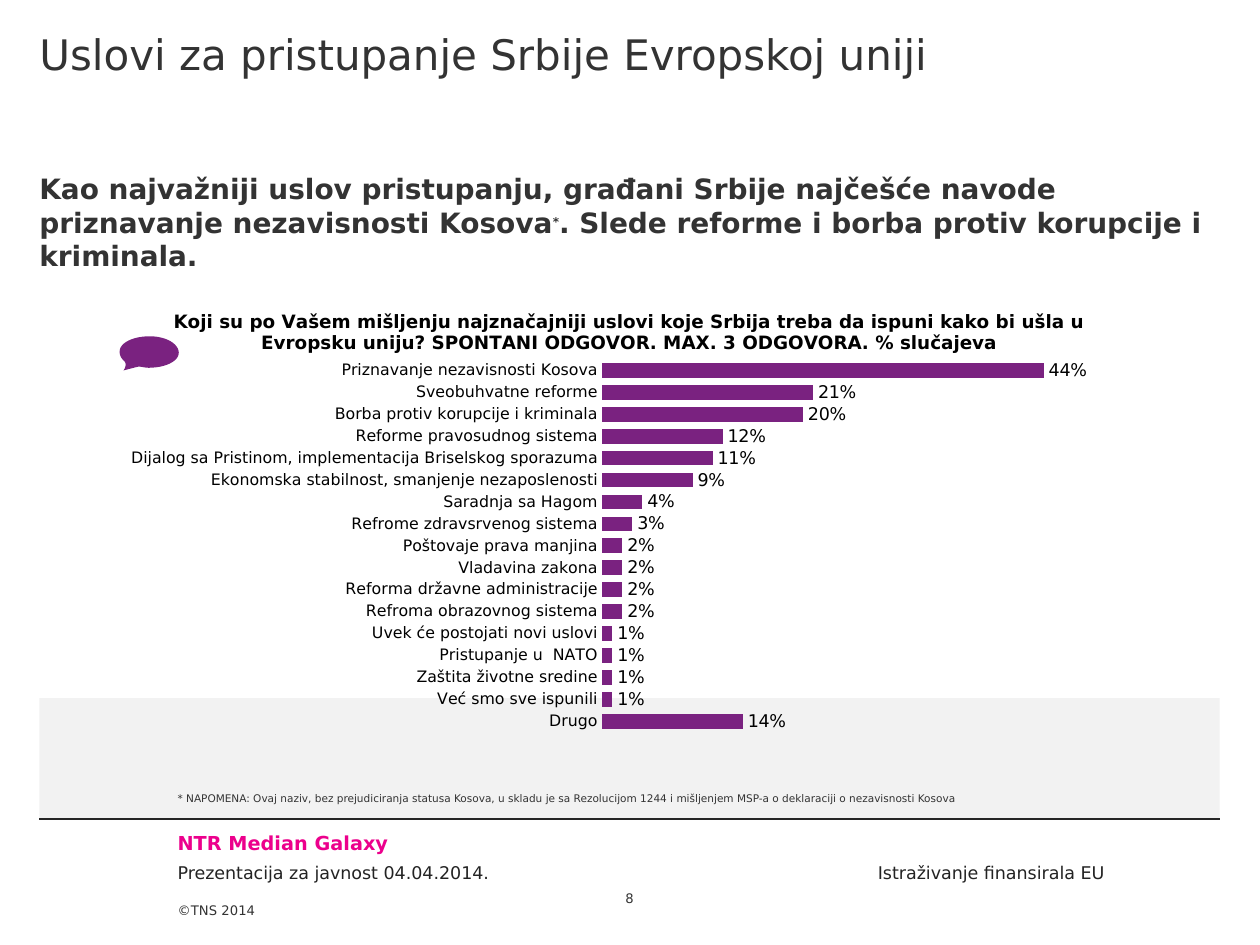
import pptx
import pptx.chart.data
import pptx.dml.color
import pptx.enum.chart
import pptx.enum.shapes
import pptx.enum.text
import pptx.oxml
import pptx.util

Pt = pptx.util.Pt
RGB = pptx.dml.color.RGBColor
Align = pptx.enum.text.PP_ALIGN
Anchor = pptx.enum.text.MSO_ANCHOR

FACE = "DejaVu Sans"
PURPLE = RGB(0x7A, 0x22, 0x80)
PINK = RGB(0xEC, 0x00, 0x8C)
DARK = RGB(0x33, 0x33, 0x33)
INK = RGB(0x23, 0x23, 0x23)
RULE = RGB(0x26, 0x26, 0x26)
PALE = RGB(0xF2, 0xF2, 0xF2)
BLACK = RGB(0, 0, 0)

LEFT, WIDE, INDENT = 22.5, 674.5, 101.5

TITLE = ("Koji su po Vašem mišljenju najznačajniji uslovi koje Srbija treba da "
         "ispuni kako bi ušla u Evropsku uniju? SPONTANI ODGOVOR. "
         "MAX. 3 ODGOVORA. % slučajeva")
ANSWERS = {
    "Priznavanje nezavisnosti Kosova": 44,
    "Sveobuhvatne reforme": 21,
    "Borba protiv korupcije i kriminala": 20,
    "Reforme pravosudnog sistema": 12,
    "Dijalog sa Pristinom, implementacija Briselskog sporazuma": 11,
    "Ekonomska stabilnost, smanjenje nezaposlenosti": 9,
    "Saradnja sa Hagom": 4,
    "Refrome zdravsrvenog sistema": 3,
    "Poštovaje prava manjina": 2,
    "Vladavina zakona": 2,
    "Reforma državne administracije": 2,
    "Refroma obrazovnog sistema": 2,
    "Uvek će postojati novi uslovi": 1,
    "Pristupanje u  NATO": 1,
    "Zaštita životne sredine": 1,
    "Već smo sve ispunili": 1,
    "Drugo": 14,
}

# Bubble outline: two control points and an end point per curve
START = (85.7, 192.2)
CURVES = [
    [(76.3, 192.2), (68.4, 195.8), (68.4, 200.9)],
    [(68.4, 203), (69.1, 204.5), (70.6, 205.9)],
    [(73.4, 208.2), (70.6, 211.7), (70.6, 211.7)],
    [(79.2, 209.5), (79.2, 209.5), (79.2, 209.5)],
    [(80.6, 209.5), (82.8, 210.2), (85, 210.2)],
    [(94.3, 210.2), (102.2, 206.6), (102.2, 201.6)],
    [(95, 192.2), (95, 192.2), START],
]
CURVES[-1][0] = (102.2, 196.6)


def apply(item, vals):
    for name, val in vals.items():
        setattr(item, name, val)


def style(font, size, color, bold=False):
    apply(font, {"name": FACE, "size": Pt(size), "bold": bold})
    font.color.rgb = color


def paint(shape, color):
    shape.shadow.inherit = False
    shape.fill.solid()
    shape.fill.fore_color.rgb = color
    shape.line.fill.background()


def add_text(slide, box, text, size, color=DARK, bold=False,
             align=Align.LEFT, anchor=Anchor.TOP, top=0, base=0):
    """Add a text box; top and base are its inner margins."""
    frame = slide.shapes.add_textbox(*map(Pt, box)).text_frame
    apply(frame, {"word_wrap": True, "vertical_anchor": anchor,
                  "margin_left": 0, "margin_right": 0,
                  "margin_top": Pt(top), "margin_bottom": Pt(base)})
    para = frame.paragraphs[0]
    para.alignment = align
    add_run(para, text, size, color, bold)
    return para


def add_run(para, text, size, color, bold):
    run = para.add_run()
    run.text = text
    style(run.font, size, color, bold)
    return run


def add_band(slide):
    band = slide.shapes.add_shape(pptx.enum.shapes.MSO_SHAPE.RECTANGLE,
                                  Pt(LEFT), Pt(399), Pt(WIDE), Pt(69))
    paint(band, PALE)
    line = slide.shapes.add_connector(
        pptx.enum.shapes.MSO_CONNECTOR.STRAIGHT,
        Pt(LEFT), Pt(468), Pt(LEFT + WIDE), Pt(468))
    line.line.color.rgb = RULE
    line.line.width = Pt(0.75)
    props = line._element.spPr
    props.append(props.makeelement(pptx.oxml.ns.qn("a:effectLst"), {}))


def set_plot(chart, spot):
    """Fix the inner plot area as fractions of the chart."""
    area = chart._chartSpace.chart.plotArea
    for old in area.findall(pptx.oxml.ns.qn("c:layout")):
        area.remove(old)
    rows = [("layoutTarget", "inner"), ("xMode", "edge"), ("yMode", "edge"),
            *zip("xywh", spot)]
    body = "".join(f'<c:{tag} val="{val}"/>' for tag, val in rows)
    area.insert(0, pptx.oxml.parse_xml(
        f'<c:layout {pptx.oxml.ns.nsdecls("c")}>'
        f'<c:manualLayout>{body}</c:manualLayout></c:layout>'))


def add_bars(slide):
    kinds = pptx.enum.chart
    data = pptx.chart.data.CategoryChartData(number_format="0\\%")
    data.categories = list(ANSWERS)
    data.add_series("Series 1", list(ANSWERS.values()))
    chart = slide.shapes.add_chart(
        kinds.XL_CHART_TYPE.BAR_CLUSTERED,
        Pt(LEFT), Pt(165.5), Pt(WIDE), Pt(263), data).chart
    style(chart.font, 18, BLACK)
    chart.has_legend = False
    frame = chart.chart_title.text_frame
    add_run(frame.paragraphs[0], TITLE, 10.5, BLACK, True)
    set_plot(chart, (0.477, 0.152, 0.425, 0.81))

    axis = chart.category_axis
    apply(axis, {"reverse_order": True, "has_major_gridlines": False,
                 "major_tick_mark": kinds.XL_TICK_MARK.NONE})
    axis.format.line.fill.background()
    style(axis.tick_labels.font, 9, BLACK)
    apply(chart.value_axis, {"visible": False, "has_major_gridlines": False,
                             "minimum_scale": 0, "maximum_scale": 50})

    plot = chart.plots[0]
    apply(plot, {"gap_width": 50, "vary_by_categories": False,
                 "has_data_labels": True})
    labels = plot.data_labels
    apply(labels, {"show_value": True, "number_format": "0\\%",
                   "number_format_is_linked": False,
                   "position": kinds.XL_LABEL_POSITION.OUTSIDE_END})
    style(labels.font, 10, BLACK)
    fill = plot.series[0].format.fill
    fill.solid()
    fill.fore_color.rgb = PURPLE


def trace(start, curves, steps=12):
    """List points along a chain of cubic curves, in hundredths of a point."""
    spots = []
    for one, two, end in curves:
        for step in range(1, steps + 1):
            t = step / steps
            u = 1 - t
            spots.append(tuple(
                100 * (u**3 * a + 3 * u*u*t * b + 3 * u*t*t * c + t**3 * d)
                for a, b, c, d in zip(start, one, two, end)))
        start = end
    return spots


def add_bubble(slide):
    x, y = START
    form = slide.shapes.build_freeform(100 * x, 100 * y, scale=Pt(1) / 100)
    form.add_line_segments(trace(START, CURVES), close=True)
    paint(form.convert_to_shape(), PURPLE)


def add_footer(slide):
    add_text(slide, (INDENT, 498, 60, 42), "©TNS 2014", 7.5,
             anchor=Anchor.BOTTOM, base=21)
    add_text(slide, (INDENT, 475, 238, 14), "NTR Median Galaxy", 11, PINK, True)
    add_text(slide, (INDENT, 492.5, 490, 12),
             "Prezentacija za javnost 04.04.2014.", 10, INK)
    add_text(slide, (386, 492.5, 245, 12), "Istraživanje finansirala EU",
             10, INK, align=Align.RIGHT)
    add_text(slide, (340, 498, 39.5, 20), "8", 7.5,
             align=Align.CENTER, anchor=Anchor.BOTTOM)


def add_heads(slide):
    add_text(slide, (LEFT, 0, WIDE, 81.5),
             "Uslovi za pristupanje Srbije Evropskoj uniji", 24, top=16.5)
    para = add_text(slide, (LEFT, 81.5, WIDE, 60),
                    "Kao najvažniji uslov pristupanju, građani Srbije najčešće "
                    "navode priznavanje nezavisnosti Kosova",
                    16, bold=True, top=16.5)
    star = add_run(para, "*", 12, DARK, True)
    star.font._element.set("baseline", "30000")
    add_run(para, ". Slede reforme i borba protiv korupcije i kriminala.",
            16, DARK, True)


def main():
    deck = pptx.Presentation()
    apply(deck, {"slide_width": Pt(720), "slide_height": Pt(540)})
    slide = deck.slides.add_slide(deck.slide_layouts[6])
    add_band(slide)
    add_footer(slide)
    add_heads(slide)
    add_bars(slide)
    add_text(slide, (INDENT, 438.5, 595.5, 29),
             "* NAPOMENA: Ovaj naziv, bez prejudiciranja statusa Kosova, u "
             "skladu je sa Rezolucijom 1244 i mišljenjem MSP-a o deklaraciji "
             "o nezavisnosti Kosova", 6, anchor=Anchor.BOTTOM, base=8.5)
    add_bubble(slide)
    deck.save("out.pptx")


if __name__ == "__main__":
    main()
